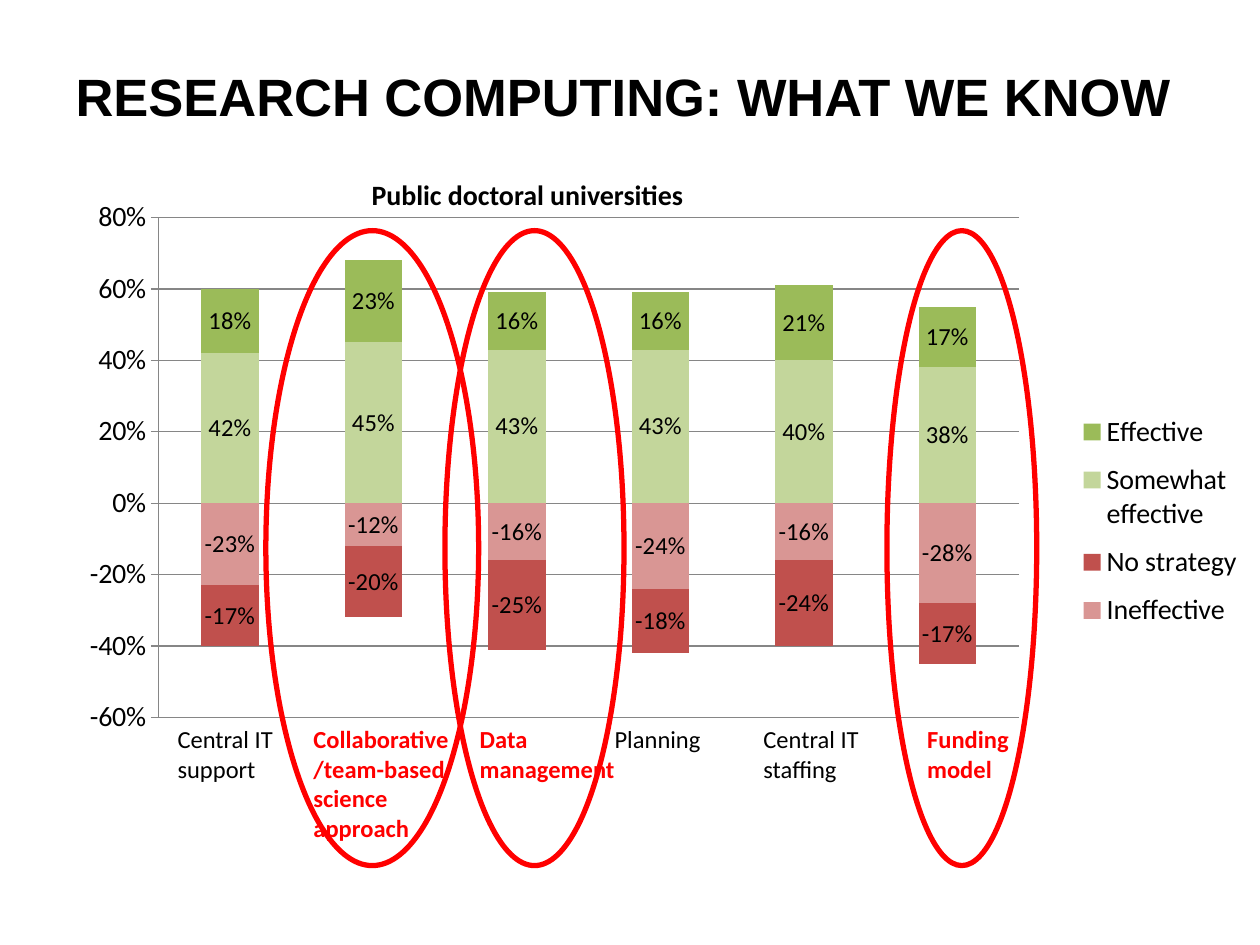
"""Build the slide on research computing strategy at public doctoral universities."""
from typing import NamedTuple

from pptx import Presentation
from pptx.chart.data import CategoryChartData
from pptx.dml.color import RGBColor
from pptx.enum.chart import XL_CHART_TYPE, XL_LABEL_POSITION, XL_LEGEND_POSITION, XL_TICK_MARK
from pptx.enum.shapes import MSO_SHAPE
from pptx.enum.text import MSO_ANCHOR, PP_ALIGN
from pptx.oxml import parse_xml
from pptx.oxml.ns import nsdecls
from pptx.slide import Slide
from pptx.text.text import TextFrame
from pptx.util import Cm, Pt

BLACK = RGBColor(0x00, 0x00, 0x00)
RED = RGBColor(0xFF, 0x00, 0x00)
GREY = RGBColor(0x86, 0x86, 0x86)
PINK = RGBColor(0xD9, 0x96, 0x94)
BRICK = RGBColor(0xC0, 0x50, 0x4D)
PALE_GREEN = RGBColor(0xC3, 0xD6, 0x9B)
GREEN = RGBColor(0x9B, 0xBB, 0x59)

LABEL_TOP = 14.48
RING_TOP, RING_HEIGHT = 4.65, 12.8


class Rating(NamedTuple):
    name: str
    color: RGBColor
    values: tuple[float, ...]


class Label(NamedTuple):
    text: str
    left: float
    width: float
    height: float
    marked: bool = False


class Ring(NamedTuple):
    left: float
    width: float


class Area(NamedTuple):
    x: float
    y: float
    w: float
    h: float


RATINGS = [
    Rating("Ineffective", PINK, (-0.23, -0.12, -0.16, -0.24, -0.16, -0.28)),
    Rating("No strategy", BRICK, (-0.17, -0.20, -0.25, -0.18, -0.24, -0.17)),
    Rating("Somewhat effective", PALE_GREEN, (0.42, 0.45, 0.43, 0.43, 0.40, 0.38)),
    Rating("Effective", GREEN, (0.18, 0.23, 0.16, 0.16, 0.21, 0.17)),
]
LABELS = [
    Label("Central IT support", 3.33, 2.74, 1.45),
    Label("Collaborative/team-based science approach", 6.07, 3.35, 2.64, True),
    Label("Data management", 9.42, 3.45, 1.45, True),
    Label("Planning", 12.14, 2.74, 0.86),
    Label("Central IT staffing", 15.14, 2.74, 1.45),
    Label("Funding model", 18.44, 2.74, 1.45, True),
]
RINGS = [Ring(5.36, 4.29), Ring(17.88, 3.02), Ring(8.97, 3.61)]
PLOT_AREA = Area(0.117, 0.042, 0.69, 0.894)
LEGEND_AREA = Area(0.84, 0.37, 0.16, 0.43)


def add_run(tf: TextFrame, text: str, size: float, font: str = "Calibri",
            color: RGBColor = BLACK, bold: bool = False) -> None:
    r = tf.paragraphs[0].add_run()
    r.text = text
    r.font.name, r.font.size, r.font.bold = font, Pt(size), bold
    r.font.color.rgb = color


def add_text(s: Slide, left: float, top: float, width: float, height: float,
             text: str, size: float, color: RGBColor, bold: bool) -> None:
    sp = s.shapes.add_textbox(Cm(left), Cm(top), Cm(width), Cm(height))
    sp.text_frame.word_wrap = True
    add_run(sp.text_frame, text, size, color=color, bold=bold)


def add_title(s: Slide, text: str) -> None:
    sp = s.shapes.title
    sp.left, sp.top, sp.width, sp.height = Cm(1.27), Cm(0.33), Cm(23.29), Cm(3.18)
    sp.text_frame.vertical_anchor = MSO_ANCHOR.MIDDLE
    sp.text_frame.paragraphs[0].alignment = PP_ALIGN.LEFT
    add_run(sp.text_frame, text, 30, "Arial", bold=True)


def add_rating_chart(s: Slide) -> None:
    data = CategoryChartData(number_format="0%")
    data.categories = [str(i + 1) for i in range(len(LABELS))]
    for rating in RATINGS:
        data.add_series(rating.name, rating.values)
    chart = s.shapes.add_chart(XL_CHART_TYPE.COLUMN_STACKED, Cm(0.25), Cm(3.91),
                               Cm(25.15), Cm(11.28), data).chart
    chart.has_title = False
    chart.font.name, chart.font.size = "Calibri", Pt(18)
    chart.font.color.rgb = BLACK

    plot = chart.plots[0]
    plot.gap_width, plot.overlap, plot.vary_by_categories = 150, 100, False
    for series, rating in zip(plot.series, RATINGS):
        series.format.fill.solid()
        series.format.fill.fore_color.rgb = rating.color
        series.invert_if_negative = False
        labels = series.data_labels
        labels.show_value = True
        labels.position = XL_LABEL_POSITION.CENTER
        labels.number_format, labels.number_format_is_linked = "0%", False
        labels.font.size = Pt(14)

    chart.category_axis.visible = False
    axis = chart.value_axis
    axis.minimum_scale, axis.maximum_scale, axis.major_unit = -0.6, 0.8, 0.2
    axis.major_tick_mark = XL_TICK_MARK.OUTSIDE
    axis.minor_tick_mark = XL_TICK_MARK.NONE
    axis.tick_labels.number_format = "0%"
    axis.tick_labels.number_format_is_linked = False
    axis.tick_labels.font.size = Pt(16)
    axis.has_major_gridlines = True
    for line in (axis.format.line, axis.major_gridlines.format.line):
        line.color.rgb, line.width = GREY, Pt(0.75)

    chart.has_legend = True
    chart.legend.position = XL_LEGEND_POSITION.RIGHT
    chart.legend.include_in_layout = False
    chart.legend.font.size = Pt(16)
    set_layout(chart.element.xpath("c:chart/c:plotArea")[0], 0, PLOT_AREA,
               '<c:layoutTarget val="inner"/>')
    set_layout(chart.element.xpath("c:chart/c:legend")[0], 1, LEGEND_AREA)


def set_layout(parent, index: int, area: Area, target: str = "") -> None:
    for old in parent.xpath("c:layout"):
        parent.remove(old)
    settings = {"xMode": "edge", "yMode": "edge", **area._asdict()}
    parts = "".join(f'<c:{tag} val="{val}"/>' for tag, val in settings.items())
    parent.insert(index, parse_xml(f'<c:layout {nsdecls("c")}><c:manualLayout>{target}{parts}'
                                   '</c:manualLayout></c:layout>'))


def add_ring(s: Slide, ring: Ring) -> None:
    sp = s.shapes.add_shape(MSO_SHAPE.OVAL, Cm(ring.left), Cm(RING_TOP),
                            Cm(ring.width), Cm(RING_HEIGHT))
    sp.shadow.inherit = False
    sp.fill.background()
    sp.line.color.rgb, sp.line.width = RED, Pt(3)


def main() -> None:
    prs = Presentation()
    prs.slide_width, prs.slide_height = Cm(25.4), Cm(19.05)
    s = prs.slides.add_slide(prs.slide_layouts[5])
    add_title(s, "RESEARCH COMPUTING: WHAT WE KNOW")
    add_rating_chart(s)
    for label in LABELS:
        add_text(s, label.left, LABEL_TOP, label.width, label.height, label.text, 14,
                 RED if label.marked else BLACK, label.marked)
    add_text(s, 7.24, 3.45, 8.15, 0.94, "Public doctoral universities", 16, BLACK, True)
    for ring in RINGS:
        add_ring(s, ring)
    prs.save("out.pptx")


if __name__ == "__main__":
    main()
